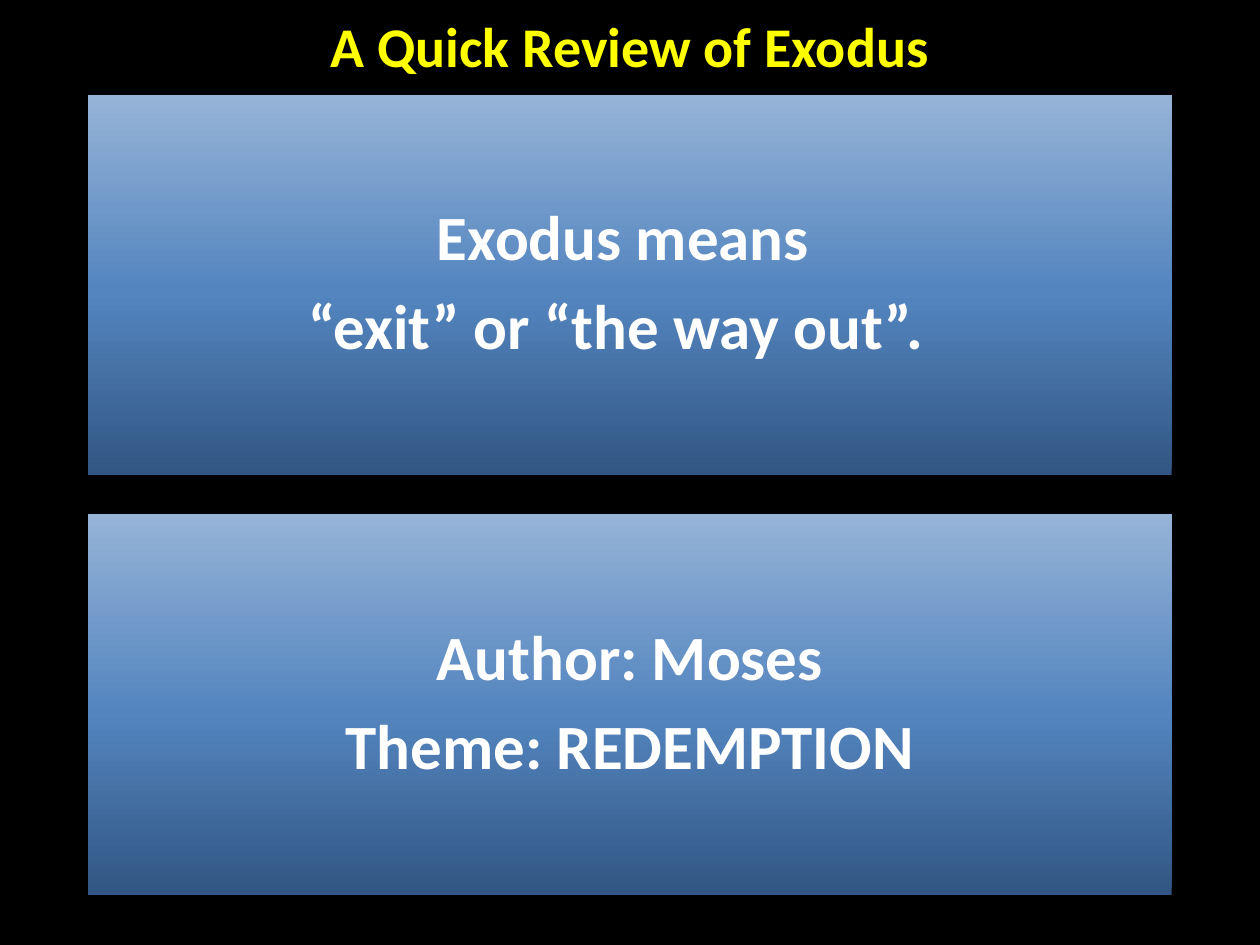
from copy import deepcopy
from dataclasses import dataclass

from pptx import Presentation
from pptx.dml.color import RGBColor
from pptx.enum.shapes import MSO_SHAPE
from pptx.enum.text import MSO_ANCHOR, PP_ALIGN
from pptx.util import Inches, Pt

COLOURS = {
    "background": "000000",
    "title": "FFFF00",
    "text": "FFFFFF",
    "dark": "315683",
    "middle": "5485BF",
    "light": "95B3D7",
}
GRADIENT = [(0, "dark"), (0.48, "middle"), (1, "light")]
PANEL_LEFT, PANEL_WIDTH, PANEL_HEIGHT = 0.7, 8.6, 3.02
PANEL_TOP, PANEL_PITCH = 0.75, 3.33


@dataclass
class Line:
    text: str
    right_indent: float = 0  # inches


PANELS = [
    [Line("Exodus means", 0.11), Line("“exit” or “the way out”.", 0.22)],
    [Line("Author: Moses"), Line("Theme: REDEMPTION")],
]


def colour(name: str) -> RGBColor:
    return RGBColor.from_string(COLOURS[name])


def write_line(paragraph, line: Line, size: int, colour_name: str) -> None:
    paragraph.alignment = PP_ALIGN.CENTER
    if line.right_indent:
        paragraph._p.get_or_add_pPr().set("marR", str(Inches(line.right_indent)))
    run = paragraph.add_run()
    run.text = line.text
    for name, value in {"name": "Calibri", "size": Pt(size), "bold": True}.items():
        setattr(run.font, name, value)
    run.font.color.rgb = colour(colour_name)


def fill_gradient(fill) -> None:
    fill.gradient()
    fill.gradient_angle = 90  # first stop at the bottom
    first = fill.gradient_stops[0]._gs
    first.addnext(deepcopy(first))
    for stop, (position, name) in zip(fill.gradient_stops, GRADIENT):
        stop.position = position
        stop.color.rgb = colour(name)


def add_title(slide, text: str) -> None:
    title = slide.shapes.add_textbox(Inches(0.5), Inches(0.05), Inches(9), Inches(0.62))
    frame = title.text_frame
    frame.word_wrap = True
    frame.vertical_anchor = MSO_ANCHOR.MIDDLE
    write_line(frame.paragraphs[0], Line(text), 32, "title")


def add_panel(slide, top: float, lines: list[Line]) -> None:
    panel = slide.shapes.add_shape(
        MSO_SHAPE.RECTANGLE, Inches(PANEL_LEFT), Inches(top),
        Inches(PANEL_WIDTH), Inches(PANEL_HEIGHT))
    panel.shadow.inherit = False
    panel.line.fill.background()
    fill_gradient(panel.fill)

    frame = panel.text_frame
    frame.word_wrap = True
    frame.vertical_anchor = MSO_ANCHOR.MIDDLE
    for side in ("left", "top", "right", "bottom"):
        setattr(frame, f"margin_{side}", Inches(0.15))
    for index, line in enumerate(lines):
        paragraph = frame.add_paragraph() if index else frame.paragraphs[0]
        paragraph.line_spacing = 0.9
        paragraph.space_after = Pt(12)
        write_line(paragraph, line, 36, "text")


def main() -> None:
    deck = Presentation()
    deck.slide_width, deck.slide_height = Inches(10), Inches(7.5)
    slide = deck.slides.add_slide(deck.slide_layouts[6])
    slide.background.fill.solid()
    slide.background.fill.fore_color.rgb = colour("background")

    # Heading
    add_title(slide, "A Quick Review of Exodus")

    # Stacked panels
    for row, lines in enumerate(PANELS):
        add_panel(slide, PANEL_TOP + row * PANEL_PITCH, lines)

    deck.save("out.pptx")


if __name__ == "__main__":
    main()
